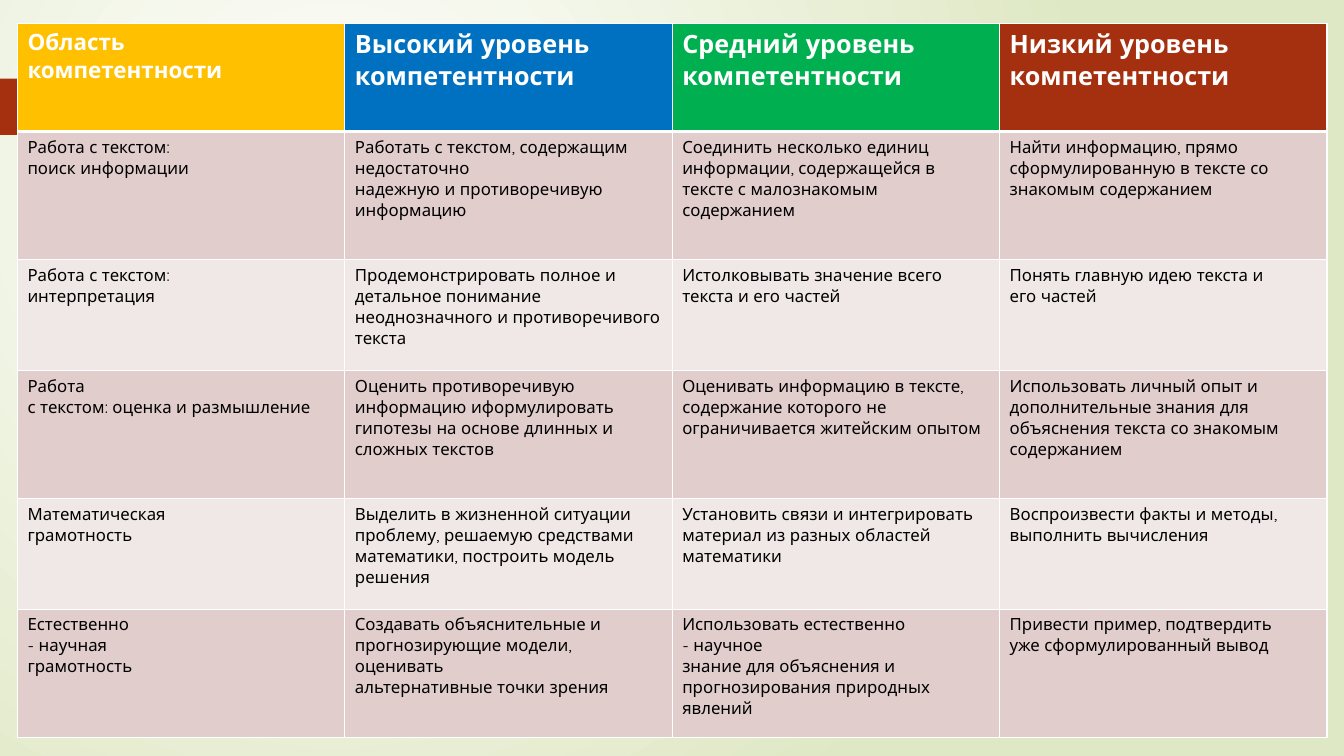
from dataclasses import dataclass

from lxml import etree
from pptx import Presentation
from pptx import util as u
from pptx.dml.color import RGBColor
from pptx.oxml import ns

FONT = "Quicksand"
WHITE, BLACK, RUST = "FFFFFF", "000000", "A53010"
BANDS = ("E1CDCC", "F0E8E7")
COL = 8.25
HEIGHTS = (2.72, 3.23, 2.79, 3.23, 2.79, 3.23)


@dataclass
class Head:
    text: str
    fill: str
    size: int = 18


HEADS = [
    Head("Область\nкомпетентности", "FFC000", 16),
    Head("Высокий уровень\nкомпетентности", "0070C0"),
    Head("Средний уровень\nкомпетентности", "00B050"),
    Head("Низкий уровень\nкомпетентности", RUST),
]

ROWS = [
    ("Работа с текстом:\nпоиск информации",
     "Работать с текстом, содержащим недостаточно\n"
     "надежную и противоречивую информацию",
     "Соединить несколько единиц\nинформации, содержащейся в\n"
     "тексте с малознакомым\nсодержанием",
     "Найти информацию, прямо\n"
     "сформулированную в тексте со знакомым содержанием"),
    ("Работа с текстом:\nинтерпретация",
     "Продемонстрировать полное и детальное понимание\n"
     "неоднозначного и противоречивого текста",
     "Истолковывать значение всего\nтекста и его частей",
     "Понять главную идею текста и\nего частей"),
    ("Работа\nс текстом: оценка и размышление",
     "Оценить противоречивую\nинформацию иформулировать\n"
     "гипотезы на основе длинных и\nсложных текстов",
     "Оценивать информацию в тексте, содержание которого "
     "не ограничивается житейским опытом",
     "Использовать личный опыт и\nдополнительные знания для\n"
     "объяснения текста со знакомым\nсодержанием"),
    ("Математическая\nграмотность",
     "Выделить в жизненной ситуации проблему, решаемую средствами\n"
     "математики, построить модель решения",
     "Установить связи и интегрировать\nматериал из разных областей\n"
     "математики",
     "Воспроизвести факты и методы,\nвыполнить вычисления"),
    ("Естественно\n- научная\nграмотность",
     "Создавать объяснительные и\nпрогнозирующие модели, оценивать\n"
     "альтернативные точки зрения",
     "Использовать естественно\n- научное\nзнание для объяснения и\n"
     "прогнозирования природных\nявлений",
     "Привести пример, подтвердить\nуже сформулированный вывод"),
]


def color(code: str) -> RGBColor:
    return RGBColor.from_string(code)


def node(parent, tag: str, **attrs):
    """Add a child element such as a:ln with its attributes."""
    child = etree.SubElement(parent, ns.qn(tag))
    for key, value in attrs.items():
        child.set(key, str(value))
    return child


def write(frame, words: str, size: int = 12, ink: str = BLACK,
          bold: bool = False) -> None:
    """Put each line of words in its own paragraph."""
    frame.text = words
    for para in frame.paragraphs:
        for run in para.runs:
            font = run.font
            font.name, font.size, font.bold = FONT, u.Pt(size), bold
            font.color.rgb = color(ink)


def border(cell, top: int = 1, bottom: int = 1) -> None:
    props = cell._tc.get_or_add_tcPr()
    for side, width in zip("LRTB", (1, 1, top, bottom)):
        line = node(props, f"a:ln{side}", w=u.Pt(width))
        node(node(line, "a:solidFill"), "a:srgbClr", val=WHITE)


def paint(cell, fill: str) -> None:
    cell.fill.solid()
    cell.fill.fore_color.rgb = color(fill)


def backdrop(slide) -> None:
    """Fill the slide with a round glow centred in its upper left part."""
    slide.background.fill.gradient()
    grad = slide.element.find(".//" + ns.qn("a:gradFill"))
    for child in list(grad):
        grad.remove(child)
    stops = node(grad, "a:gsLst")
    for pos, code in ((0, WHITE), (100000, "DFE8C4")):
        node(node(stops, "a:gs", pos=pos), "a:srgbClr", val=code)
    glow = node(grad, "a:path", path="circle")
    node(glow, "a:fillToRect", l=50000, t=50000, r=100000, b=100000)


def marker(slide) -> None:
    """Draw the arrow tab at the left edge, in hundredths of a centimetre."""
    pen = slide.shapes.build_freeform(0, 198, scale=u.Cm(1) / 100)
    pen.add_line_segments([(371, 198), (376, 201), (440, 264), (442, 269),
                           (440, 274), (376, 338), (371, 340), (0, 340)])
    shape = pen.convert_to_shape()
    shape.shadow.inherit = False
    shape.fill.solid()
    shape.fill.fore_color.rgb = color(RUST)
    shape.line.fill.background()


def grid(slide) -> None:
    table = slide.shapes.add_table(
        len(HEIGHTS), len(HEADS), u.Cm(0.44), u.Cm(0.59),
        u.Cm(COL * len(HEADS)), u.Cm(sum(HEIGHTS))).table
    table.horz_banding = False
    for col in table.columns:
        col.width = u.Cm(COL)
    for row, height in zip(table.rows, HEIGHTS):
        row.height = u.Cm(height)
    for c, head in enumerate(HEADS):
        cell = table.cell(0, c)
        write(cell.text_frame, head.text, size=head.size, ink=WHITE, bold=True)
        border(cell, bottom=3)
        paint(cell, head.fill)
    for r, row in enumerate(ROWS):
        for c, words in enumerate(row):
            cell = table.cell(r + 1, c)
            write(cell.text_frame, words)
            border(cell, top=1 if r else 3)
            paint(cell, BANDS[r % 2])


def main() -> None:
    deck = Presentation()
    deck.slide_width, deck.slide_height = u.Cm(33.87), u.Cm(19.05)
    slide = deck.slides.add_slide(deck.slide_layouts[6])
    backdrop(slide)
    marker(slide)
    grid(slide)
    deck.save("out.pptx")


if __name__ == "__main__":
    main()
